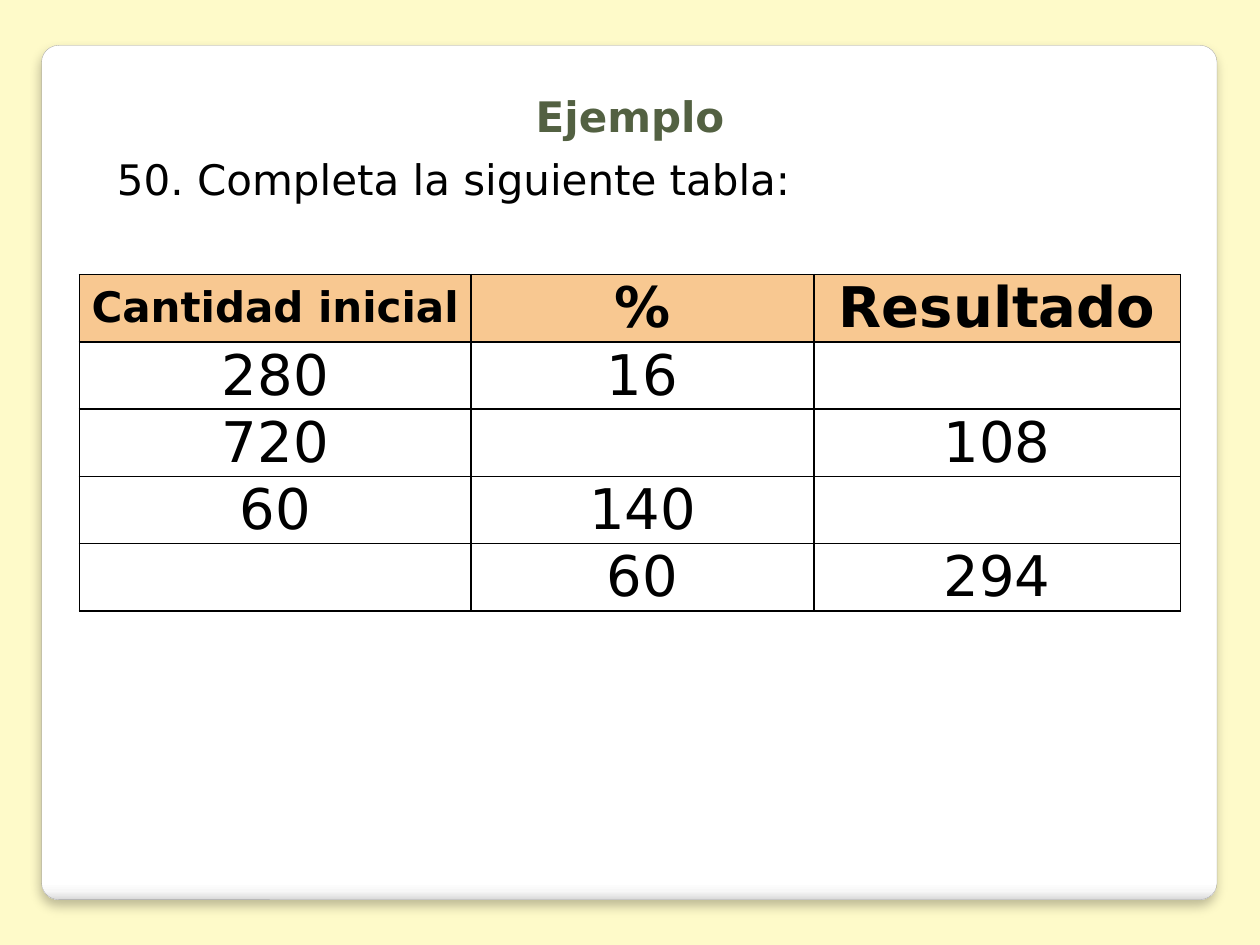
from lxml import etree
from pptx import Presentation
from pptx.dml.color import RGBColor
from pptx.enum.shapes import MSO_SHAPE
from pptx.enum.text import MSO_ANCHOR, MSO_AUTO_SIZE, PP_ALIGN
from pptx.oxml.ns import qn
from pptx.util import Inches, Pt

ROUND = MSO_SHAPE.ROUNDED_RECTANGLE
TOP, MIDDLE = MSO_ANCHOR.TOP, MSO_ANCHOR.MIDDLE
GROW = MSO_AUTO_SIZE.SHAPE_TO_FIT_TEXT
CENTER, JUSTIFY = PP_ALIGN.CENTER, PP_ALIGN.JUSTIFY

FONT = "DejaVu Sans"
COLORS = {
    "page": "FEFAC9",
    "card": "FFFFFF",
    "fade": "F7F7F7",
    "edge": "DADADA",
    "rim": "A4A4A4",
    "title": "536142",
    "text": "000000",
    "head": "F8C891",
}
STOPS = [(0, "card"), (98, "card"), (99, "fade"), (100, "edge")]
COLS = [3.11, 2.72, 2.91]
ROW = 0.53
ROWS = [
    ["Cantidad inicial", "%", "Resultado"],
    ["280", "16", ""],
    ["720", "", "108"],
    ["60", "140", ""],
    ["", "60", "294"],
]


def rgb(name):
    return RGBColor.from_string(COLORS[name])


def add_node(parent, tag, **attrs):
    node = etree.SubElement(parent, qn(tag))
    for key, value in attrs.items():
        node.set(key, str(value))
    return node


def put_text(frame, text, size=24, color="text", bold=False, align=CENTER):
    para = frame.paragraphs[0]
    para.alignment = align
    run = para.add_run()
    run.text = text
    font = run.font
    font.name, font.size, font.bold = FONT, Pt(size), bold
    font.color.rgb = rgb(color)


def place(shape, left, top, width, height):
    shape.left, shape.top = Inches(left), Inches(top)
    shape.width, shape.height = Inches(width), Inches(height)
    frame = shape.text_frame
    frame.word_wrap, frame.auto_size = True, GROW
    frame.vertical_anchor = TOP
    return frame


def add_card(slide):
    """Rounded panel with a shaded lower edge, behind all the content."""
    card = slide.shapes.add_shape(
        ROUND, Inches(0.33), Inches(0.36), Inches(9.33), Inches(6.78))
    card.adjustments[0] = 0.02
    card.fill.gradient()
    card.fill.gradient_angle = 270
    props = card.element.spPr
    stops = props.find(".//" + qn("a:gsLst"))
    for stop in list(stops):
        stops.remove(stop)
    for pos, name in STOPS:
        stop = add_node(stops, "a:gs", pos=pos * 1000)
        add_node(stop, "a:srgbClr", val=COLORS[name])
    card.line.color.rgb = rgb("rim")
    card.line.width = Pt(0.16)
    card.shadow.inherit = False
    shade = add_node(props.find(qn("a:effectLst")), "a:outerShdw",
                     blurRad=Pt(6), dist=Pt(4), dir=90 * 60000)
    tint = add_node(shade, "a:srgbClr", val=COLORS["text"])
    add_node(tint, "a:alpha", val=25000)
    slide.shapes.title.element.addprevious(card.element)


def add_borders(cell):
    props = cell._tc.get_or_add_tcPr()
    for index, side in enumerate(("a:lnL", "a:lnR", "a:lnT", "a:lnB")):
        line = add_node(props, side, w=Pt(1))
        fill = add_node(line, "a:solidFill")
        add_node(fill, "a:srgbClr", val=COLORS["text"])
        props.insert(index, line)


def fill_cell(cell, text, head, size):
    cell.margin_left = cell.margin_right = Inches(0.07)
    cell.margin_top = cell.margin_bottom = 0
    cell.vertical_anchor = MIDDLE
    if head:
        cell.fill.solid()
        cell.fill.fore_color.rgb = rgb("head")
    else:
        cell.fill.background()
    add_borders(cell)
    if text:
        put_text(cell.text_frame, text, size=size, bold=head)


def add_grid(slide):
    table = slide.shapes.add_table(
        len(ROWS), len(COLS), Inches(0.63), Inches(2.18),
        Inches(sum(COLS)), Inches(ROW * len(ROWS))).table
    for col, width in zip(table.columns, COLS):
        col.width = Inches(width)
    for r, row in enumerate(ROWS):
        for c, text in enumerate(row):
            size = 24 if r == c == 0 else 32
            fill_cell(table.cell(r, c), text, head=r == 0, size=size)


def main():
    deck = Presentation()
    deck.slide_width, deck.slide_height = Inches(10), Inches(7.5)
    slide = deck.slides.add_slide(deck.slide_layouts[5])
    slide.background.fill.solid()
    slide.background.fill.fore_color.rgb = rgb("page")

    add_card(slide)
    title = place(slide.shapes.title, 0.39, 0.67, 9.22, 0.5)
    put_text(title, "Ejemplo", color="title", bold=True)
    box = slide.shapes.add_textbox(0, 0, 0, 0)
    task = place(box, 0.83, 1.17, 8.35, 0.5)
    put_text(task, "50. Completa la siguiente tabla:", align=JUSTIFY)
    add_grid(slide)
    deck.save("out.pptx")


if __name__ == "__main__":
    main()
